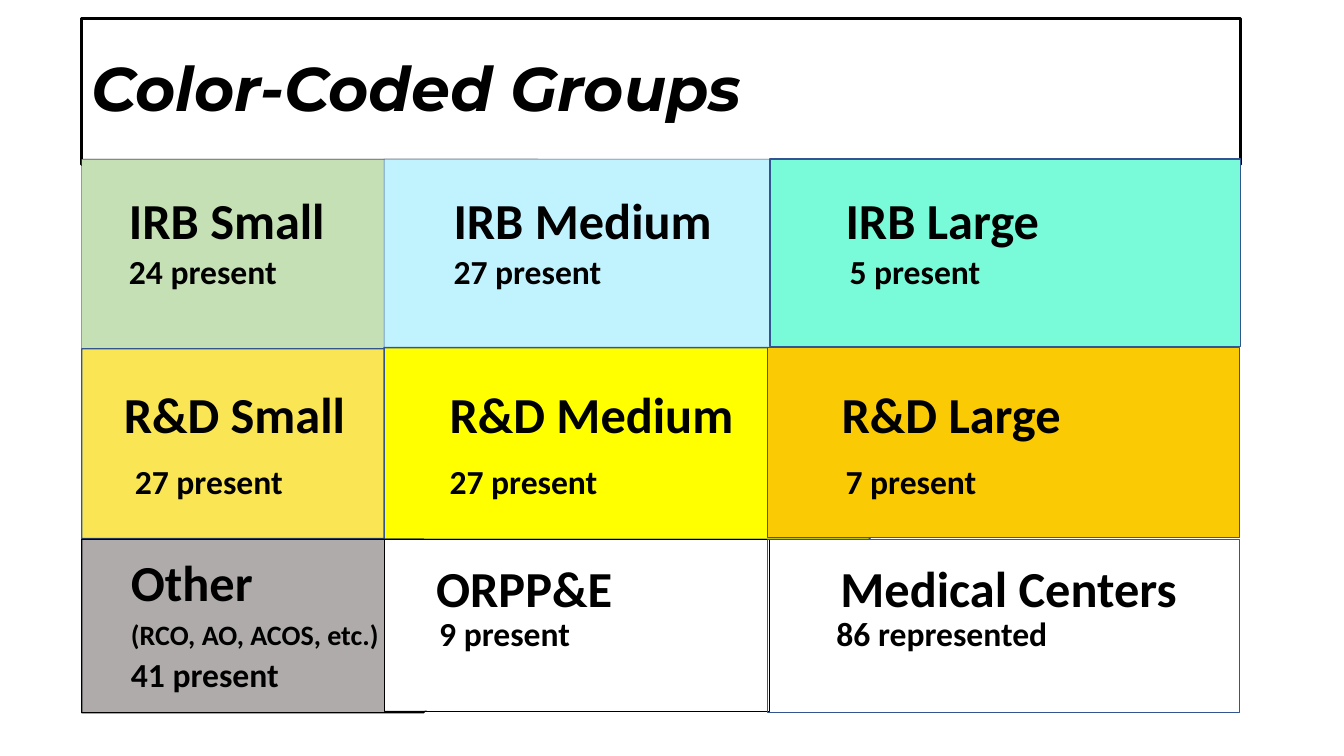
import pptx
import pptx.util
import pptx.dml.color
import pptx.enum.shapes
import pptx.enum.text

Cm = pptx.util.Cm
Pt = pptx.util.Pt
RGBColor = pptx.dml.color.RGBColor
RECT = pptx.enum.shapes.MSO_SHAPE.RECTANGLE
PLATE = pptx.enum.shapes.MSO_SHAPE.PENTAGON

BLACK = RGBColor(0x00, 0x00, 0x00)
WHITE = RGBColor(0xFF, 0xFF, 0xFF)
NAVY = RGBColor(0x32, 0x54, 0x91)
GREEN = RGBColor(0xC5, 0xE0, 0xB4)
ICE = RGBColor(0xC1, 0xF3, 0xFF)
AQUA = RGBColor(0x79, 0xFB, 0xD9)
SAND = RGBColor(0xFA, 0xE6, 0x54)
YELLOW = RGBColor(0xFF, 0xFF, 0x00)
AMBER = RGBColor(0xFA, 0xCB, 0x04)
GRAY = RGBColor(0xAF, 0xAB, 0xAB)

prs = pptx.Presentation()
prs.slide_width = Cm(33.87)
prs.slide_height = Cm(19.05)
s = prs.slides.add_slide(prs.slide_layouts[6])


def add_panel(kind, left, top, width, height, fill, line, weight):
    sp = s.shapes.add_shape(kind, Cm(left), Cm(top), Cm(width), Cm(height))
    sp.shadow.inherit = False
    if fill is None:
        sp.fill.background()
    else:
        sp.fill.solid()
        sp.fill.fore_color.rgb = fill
    sp.line.color.rgb = line
    sp.line.width = Pt(weight)
    return sp


def write(text, sp, size, font="Calibri", italic=False, spacing=1.0,
          anchor=pptx.enum.text.MSO_ANCHOR.TOP):
    tf = sp.text_frame
    tf.word_wrap = True
    tf.vertical_anchor = anchor
    p = tf.paragraphs[0]
    p.alignment = pptx.enum.text.PP_ALIGN.LEFT
    p.line_spacing = spacing
    r = p.add_run()
    r.text = text
    r.font.name = font
    r.font.size = Pt(size)
    r.font.bold = True
    r.font.italic = italic
    r.font.color.rgb = BLACK


title = add_panel(RECT, 2.06, 0.46, 29.21, 3.68, None, BLACK, 2.25)
write("Color-Coded Groups", title, 44, font="Montserrat", italic=True,
      spacing=0.9, anchor=pptx.enum.text.MSO_ANCHOR.MIDDLE)

panels = [
    (PLATE, 2.06, 4.01, 13.89, 4.78, GREEN, BLACK, 0.25),
    (PLATE, 9.68, 4.01, 13.36, 4.78, ICE, NAVY, 0.25),
    (RECT, 19.41, 4.01, 11.86, 4.72, AQUA, NAVY, 1),
    (PLATE, 2.06, 8.79, 12.95, 4.78, SAND, NAVY, 1),
    (PLATE, 9.68, 8.76, 14.63, 4.83, YELLOW, NAVY, 1),
    (RECT, 19.35, 8.76, 11.89, 4.78, AMBER, NAVY, 1),
    (PLATE, 2.06, 13.59, 10.8, 4.37, GRAY, BLACK, 1),
    (RECT, 9.68, 13.59, 9.7, 4.32, WHITE, BLACK, 0.25),
    (RECT, 19.35, 13.59, 11.89, 4.37, None, NAVY, 1),
]
for panel in panels:
    add_panel(*panel)

labels = [
    ("IRB Small", 3.0, 4.65, 36),
    ("24 present", 3.0, 6.2, 24),
    ("IRB Medium", 11.18, 4.65, 36),
    ("27 present", 11.18, 6.2, 24),
    ("IRB Large", 21.06, 4.65, 36),
    ("5 present", 21.16, 6.2, 24),
    ("R&D Small", 2.87, 9.53, 36),
    ("27 present", 3.15, 11.48, 24),
    ("R&D Medium", 11.08, 9.53, 36),
    ("27 present", 11.08, 11.48, 24),
    ("R&D Large", 20.96, 9.53, 36),
    ("7 present", 21.06, 11.48, 24),
    ("Other", 3.05, 13.77, 36),
    ("(RCO, AO, ACOS, etc.)", 3.05, 15.44, 20),
    ("41 present", 3.05, 16.36, 24),
    ("ORPP&E", 10.74, 13.92, 36),
    ("9 present", 10.82, 15.32, 24),
    ("Medical Centers", 20.93, 13.92, 36),
    ("86 represented", 20.83, 15.32, 24),
]
for text, left, top, size in labels:
    height = 0.25 + size * 0.043
    box = s.shapes.add_textbox(Cm(left), Cm(top), Cm(9.8 if left > 20 else 8), Cm(height))
    write(text, box, size)

prs.save("out.pptx")
